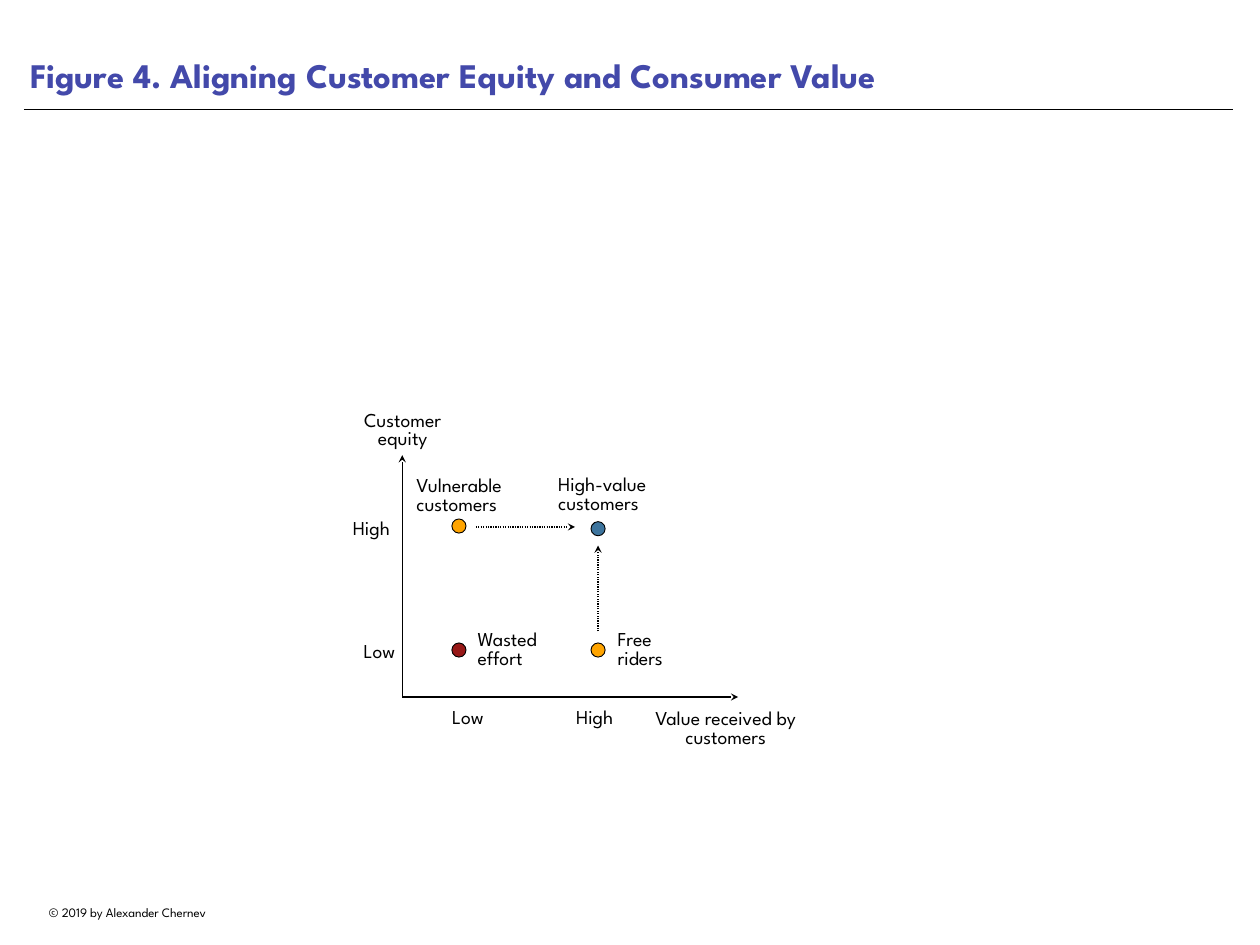
from lxml import etree
from pptx import Presentation
from pptx.dml.color import RGBColor
from pptx.enum.dml import MSO_LINE
from pptx.enum.shapes import MSO_CONNECTOR, MSO_SHAPE
from pptx.enum.text import MSO_ANCHOR, PP_ALIGN
from pptx.oxml.ns import qn
from pptx.util import Emu, Pt

LEFT, MID, RIGHT = PP_ALIGN.LEFT, PP_ALIGN.CENTER, PP_ALIGN.RIGHT
CENTER, BOTTOM, TOP = MSO_ANCHOR.MIDDLE, MSO_ANCHOR.BOTTOM, MSO_ANCHOR.TOP
OVAL, STRAIGHT, DOTS = MSO_SHAPE.OVAL, MSO_CONNECTOR.STRAIGHT, MSO_LINE.ROUND_DOT
SCALE = 9144
FONT = "League Spartan"
COLORS = {"ink": "000000", "title": "4349AA", "amber": "FFA400",
          "red": "971817", "blue": "3D749D"}
COLORS = {name: RGBColor.from_string(code) for name, code in COLORS.items()}

deck = Presentation()
deck.slide_width, deck.slide_height = Emu(1422 * SCALE), Emu(1067 * SCALE)
slide = deck.slides.add_slide(deck.slide_layouts[6])
shapes = slide.shapes


def add_text(text, area, align=LEFT, anchor=CENTER, inset=0, wrap=True,
             size=16, color="ink", bold=False, space=0.8):
    box = shapes.add_textbox(*(Emu(n * SCALE) for n in area))
    frame = box.text_frame
    pad = Emu(inset * SCALE)
    style = {"word_wrap": wrap, "vertical_anchor": anchor, "margin_left": pad,
             "margin_right": pad, "margin_top": pad, "margin_bottom": pad}
    for key, value in style.items():
        setattr(frame, key, value)
    frame.text = text
    for para in frame.paragraphs:
        para.alignment, para.line_spacing = align, space
        font = para.runs[0].font
        for key, value in {"name": FONT, "size": Pt(size), "bold": bold}.items():
            setattr(font, key, value)
        font.color.rgb = COLORS[color]


def add_line(ends, width=1, arrow=True, dash=None):
    link = shapes.add_connector(STRAIGHT, *(Emu(n * SCALE) for n in ends))
    link.line.color.rgb = COLORS["ink"]
    link.line.width = Pt(width)
    if dash:
        link.line.dash_style = dash
    if arrow:
        etree.SubElement(link.line._get_or_add_ln(), qn("a:tailEnd"), type="stealth")
    etree.SubElement(link._element.spPr, qn("a:effectLst"))


add_text("© 2019 by Alexander Chernev", (27, 1016, 234, 28), MID, TOP, 5,
         wrap=False, size=10.5, space=1)
add_line((27, 124, 1392, 124), 0.5, arrow=False)
add_text("Figure 4. Aligning Customer Equity and Consumer Value", (27, 0, 1364, 115),
         anchor=BOTTOM, inset=7, size=28, color="title", bold=True, space=1)

for tip in [(454, 514), (833, 787)]:
    add_line((454, 787, *tip))
for ends in [(537, 595, 649, 595), (675, 713, 675, 616)]:
    add_line(ends, dash=DOTS)

for text, area in [("Value received by customers", (732, 798, 174, 52)),
                   ("Customer equity", (396, 453, 117, 67))]:
    add_text(text, area, MID)

for text, left, top in [("Low", 388, 722), ("High", 382, 583),
                        ("Low", 488, 797), ("High", 634, 797)]:
    add_text(text, (left, top, 62, 30), RIGHT, inset=4)

groups = [
    ("Vulnerable customers", (470, 527, 146, 67), CENTER, "amber", 510, 586),
    ("High-value customers", (630, 529, 117, 52), BOTTOM, "blue", 667, 589),
    ("Wasted effort", (539, 708, 111, 52), CENTER, "red", 510, 726),
    ("Free\nriders", (697, 708, 102, 52), CENTER, "amber", 667, 726),
]
for text, area, anchor, color, left, top in groups:
    add_text(text, area, anchor=anchor)
    dot = shapes.add_shape(OVAL, *(Emu(n * SCALE) for n in (left, top, 16, 16)))
    dot.shadow.inherit = False
    dot.fill.solid()
    dot.fill.fore_color.rgb = COLORS[color]
    dot.line.color.rgb = COLORS["ink"]
    dot.line.width = Pt(0.75)

deck.save("out.pptx")
